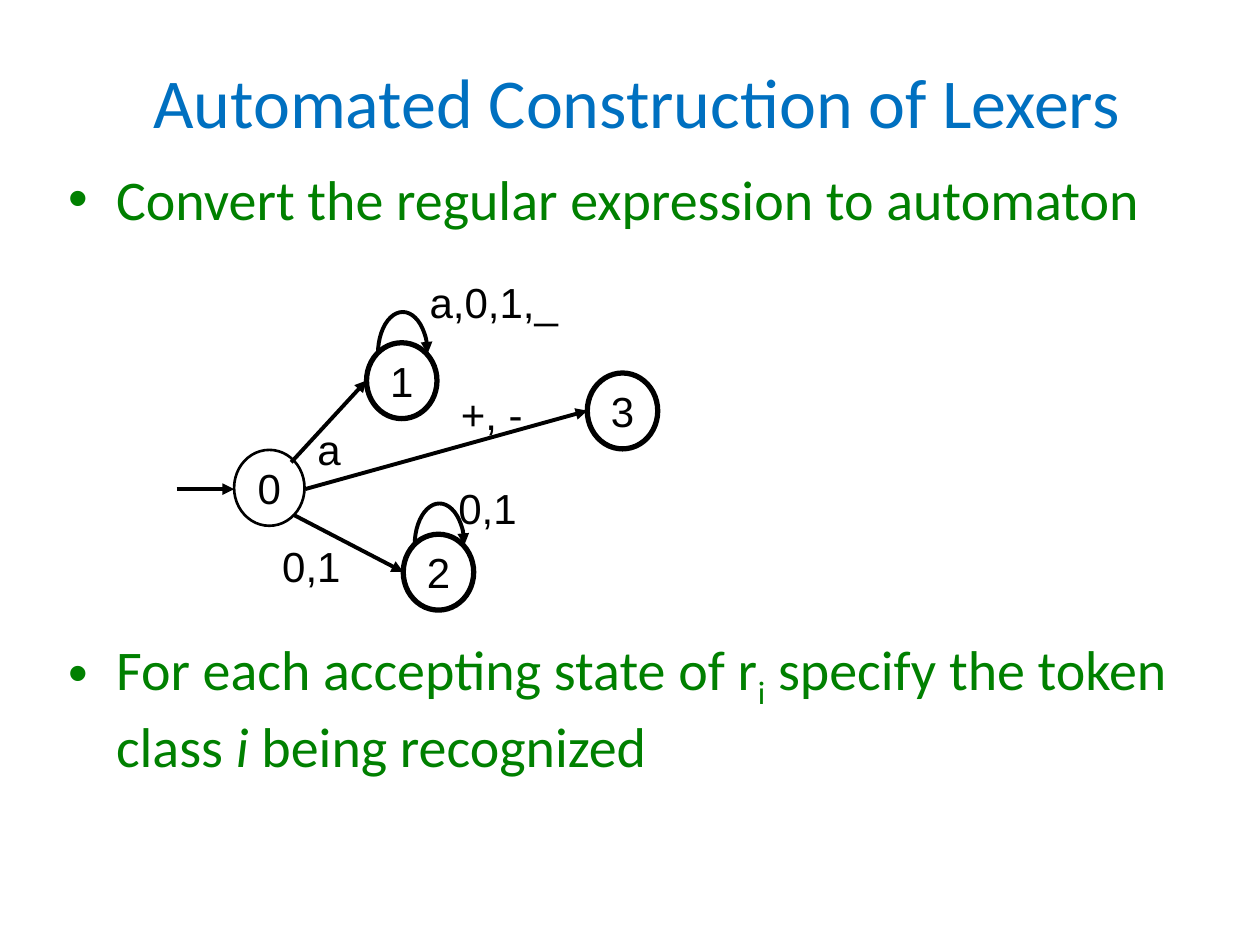
"""Build the slide on automated construction of lexers."""
from typing import NamedTuple

from lxml import etree
from pptx import Presentation
from pptx.dml.color import RGBColor
from pptx.enum.shapes import MSO_CONNECTOR, MSO_SHAPE
from pptx.enum.text import MSO_ANCHOR, MSO_AUTO_SIZE, PP_ALIGN
from pptx.oxml.ns import qn
from pptx.util import Cm, Pt

BLUE = RGBColor(0x00, 0x70, 0xC0)
GREEN = RGBColor(0x00, 0x80, 0x00)
BLACK = RGBColor(0x00, 0x00, 0x00)
WHITE = RGBColor(0xFF, 0xFF, 0xFF)
STRAIGHT = MSO_CONNECTOR.STRAIGHT
OVAL, ARC = MSO_SHAPE.OVAL, MSO_SHAPE.ARC
MIDDLE = MSO_ANCHOR.MIDDLE
CENTER = PP_ALIGN.CENTER
FIT_SHAPE, NO_FIT = MSO_AUTO_SIZE.SHAPE_TO_FIT_TEXT, MSO_AUTO_SIZE.NONE
STATE_WIDTH, STATE_HEIGHT = 1.42, 1.53


class State(NamedTuple):
    name: str
    left: float
    top: float
    accepting: bool = True
    loop: bool = False


class Edge(NamedTuple):
    x1: float
    y1: float
    x2: float
    y2: float


class Label(NamedTuple):
    text: str
    left: float
    top: float
    width: float


STATES = [
    State("0", 4.72, 9.07, accepting=False),
    State("1", 7.39, 6.91, loop=True),
    State("2", 8.13, 10.77, loop=True),
    State("3", 11.84, 7.52),
]
EDGES = [
    Edge(3.56, 9.86, 4.72, 9.86),
    Edge(5.87, 9.32, 7.39, 7.67),
    Edge(5.94, 10.39, 8.13, 11.53),
    Edge(6.15, 9.86, 11.84, 8.28),
]
LABELS = [
    Label("a", 6.15, 8.41, 0.99),
    Label("a,0,1,_", 8.41, 5.44, 3.35),
    Label("0,1", 5.44, 10.77, 1.7),
    Label("0,1", 8.99, 9.6, 1.7),
    Label("+, -", 9.04, 7.7, 1.78),
]


def set_font(paragraph, name: str, size: float, color: RGBColor) -> None:
    paragraph.font.name = name
    paragraph.font.size = Pt(size)
    paragraph.font.color.rgb = color


def style_arrow(shape) -> None:
    shape.line.color.rgb = BLACK
    shape.line.width = Pt(2.25)
    line = shape.line._get_or_add_ln()
    etree.SubElement(line, qn("a:tailEnd"), type="triangle")


def draw_state(shapes, state: State) -> None:
    shape = shapes.add_shape(OVAL, Cm(state.left), Cm(state.top),
                             Cm(STATE_WIDTH), Cm(STATE_HEIGHT))
    shape.shadow.inherit = False
    shape.line.color.rgb = BLACK
    if state.accepting:
        shape.fill.solid()
        shape.fill.fore_color.rgb = WHITE
        shape.line.width = Pt(3)
    else:
        shape.fill.background()
        shape.line.width = Pt(1.5)
    frame = shape.text_frame
    frame.word_wrap = False
    frame.vertical_anchor = MIDDLE
    frame.text = state.name
    paragraph = frame.paragraphs[0]
    paragraph.alignment = CENTER
    paragraph.space_before = Pt(4.8)
    set_font(paragraph, "Arial", 24, BLACK)


def draw_loop(shapes, state: State) -> None:
    shape = shapes.add_shape(ARC, Cm(state.left + 0.23), Cm(state.top - 0.62),
                             Cm(1), Cm(1.68))
    shape.adjustments[0] = 108
    shape.adjustments[1] = 0
    shape.shadow.inherit = False
    shape.fill.background()
    style_arrow(shape)


def draw_edge(shapes, edge: Edge) -> None:
    connector = shapes.add_connector(STRAIGHT, *(Cm(value) for value in edge))
    style_arrow(connector)
    etree.SubElement(connector._element.spPr, qn("a:effectLst"))


def draw_label(shapes, label: Label) -> None:
    box = shapes.add_textbox(Cm(label.left), Cm(label.top), Cm(label.width), Cm(1.27))
    frame = box.text_frame
    frame.word_wrap = False
    frame.auto_size = FIT_SHAPE
    frame.text = label.text
    set_font(frame.paragraphs[0], "Arial", 24, BLACK)


def format_bullet(paragraph) -> None:
    set_font(paragraph, "Calibri", 32, GREEN)
    properties = paragraph._p.get_or_add_pPr()
    indent = Cm(0.95)
    properties.set("marL", str(indent))
    properties.set("indent", str(-indent))
    bullet_font = etree.Element(qn("a:buFont"), typeface="Arial")
    bullet = etree.Element(qn("a:buChar"), char="•")
    default_font = properties.find(qn("a:defRPr"))
    default_font.addprevious(bullet_font)
    default_font.addprevious(bullet)


def draw_body(shapes) -> None:
    frame = shapes.add_textbox(Cm(1.14), Cm(3.2), Cm(23.44), Cm(13.6)).text_frame
    frame.word_wrap = True
    first = frame.paragraphs[0]
    first.text = "Convert the regular expression to automaton"
    second = frame.add_paragraph()
    second.space_before = Pt(230)
    texts = ["For each accepting state of r", "i", " specify the token class ",
             "i", " being recognized"]
    runs = [second.add_run() for _ in texts]
    for run, text in zip(runs, texts):
        run.text = text
    runs[1].font._element.set("baseline", "-25000")
    runs[3].font.italic = True
    for paragraph in (first, second):
        format_bullet(paragraph)


def draw_title(title) -> None:
    title.left, title.top = Cm(1.22), Cm(0.43)
    title.width, title.height = Cm(23.22), Cm(3.18)
    frame = title.text_frame
    frame.text = "Automated Construction of Lexers"
    frame.auto_size = NO_FIT
    frame.vertical_anchor = MIDDLE
    paragraph = frame.paragraphs[0]
    paragraph.alignment = CENTER
    set_font(paragraph, "Calibri", 40, BLUE)


def main() -> None:
    presentation = Presentation()
    presentation.slide_width, presentation.slide_height = Cm(25.4), Cm(19.05)
    slide = presentation.slides.add_slide(presentation.slide_layouts[5])
    shapes = slide.shapes
    draw_title(shapes.title)
    draw_body(shapes)
    for state in STATES:
        draw_state(shapes, state)
        if state.loop:
            draw_loop(shapes, state)
    for edge in EDGES:
        draw_edge(shapes, edge)
    for label in LABELS:
        draw_label(shapes, label)
    presentation.save("out.pptx")


if __name__ == "__main__":
    main()
